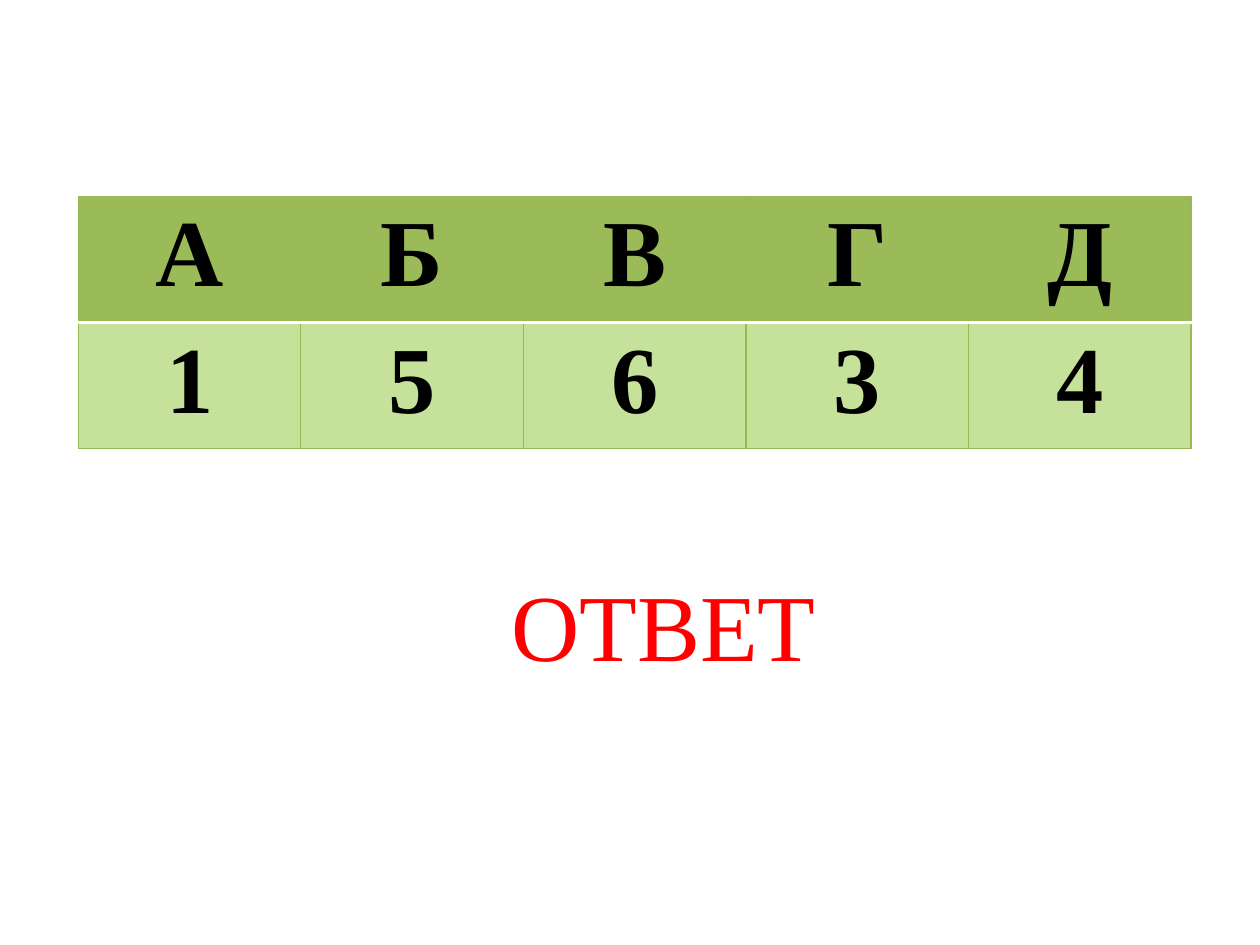
from lxml.etree import SubElement
from pptx import Presentation
from pptx.dml.color import RGBColor
from pptx.enum.text import PP_ALIGN as Align
from pptx.oxml.ns import qn
from pptx.util import Cm, Pt

COLORS = {
    "header": "9BBB59",
    "body": "C6E29A",
    "grid": "98B955",
    "divider": "FFFFFF",
    "text": "000000",
    "answer": "FF0000",
}
LETTERS = "АБВГД"
NUMBERS = "15634"


def write(frame, text, color="text", size=54, bold=False, align=Align.LEFT):
    paragraph = frame.paragraphs[0]
    paragraph.alignment = align
    run = paragraph.add_run()
    run.text = text
    font = run.font
    font.name, font.size, font.bold = "Times New Roman", Pt(size), bold
    font.color.rgb = RGBColor.from_string(COLORS[color])


def set_borders(cell, **sides):
    """Draw cell borders; each side is a (colour name, width in points) pair."""
    properties = cell._tc.get_or_add_tcPr()
    for position, side in enumerate(("L", "R", "T", "B")):
        color, width = sides.get(side, ("grid", 0.75))
        line = SubElement(properties, qn(f"a:ln{side}"), w=str(Pt(width)))
        fill = SubElement(line, qn("a:solidFill"))
        SubElement(fill, qn("a:srgbClr"), val=COLORS[color])
        properties.remove(line)
        properties.insert(position, line)


def add_key_table(slide, left, top, width, height):
    rows = (
        (LETTERS, "header", {"B": ("divider", 2)}),
        (NUMBERS, "body", {"T": ("divider", 2)}),
    )
    key = slide.shapes.add_table(len(rows), len(LETTERS), left, top, width, height).table
    for row, (entries, shade, borders) in enumerate(rows):
        for column, entry in enumerate(entries):
            cell = key.cell(row, column)
            cell.fill.solid()
            cell.fill.fore_color.rgb = RGBColor.from_string(COLORS[shade])
            set_borders(cell, **borders)
            write(cell.text_frame, entry, bold=True, align=Align.CENTER)


def add_answer_label(slide, left, top, width, height):
    frame = slide.shapes.add_textbox(left, top, width, height).text_frame
    frame.word_wrap = True
    frame.margin_left = Cm(5.56)
    write(frame, "ОТВЕТ", color="answer")


def main():
    deck = Presentation()
    deck.slide_width, deck.slide_height = Cm(25.4), Cm(19.05)
    slide = deck.slides.add_slide(deck.slide_layouts[6])
    add_answer_label(slide, Cm(4.75), Cm(11.3), Cm(17.65), Cm(2.57))
    add_key_table(slide, Cm(1.58), Cm(3.96), Cm(22.43), Cm(5.08))
    deck.save("out.pptx")


if __name__ == "__main__":
    main()
